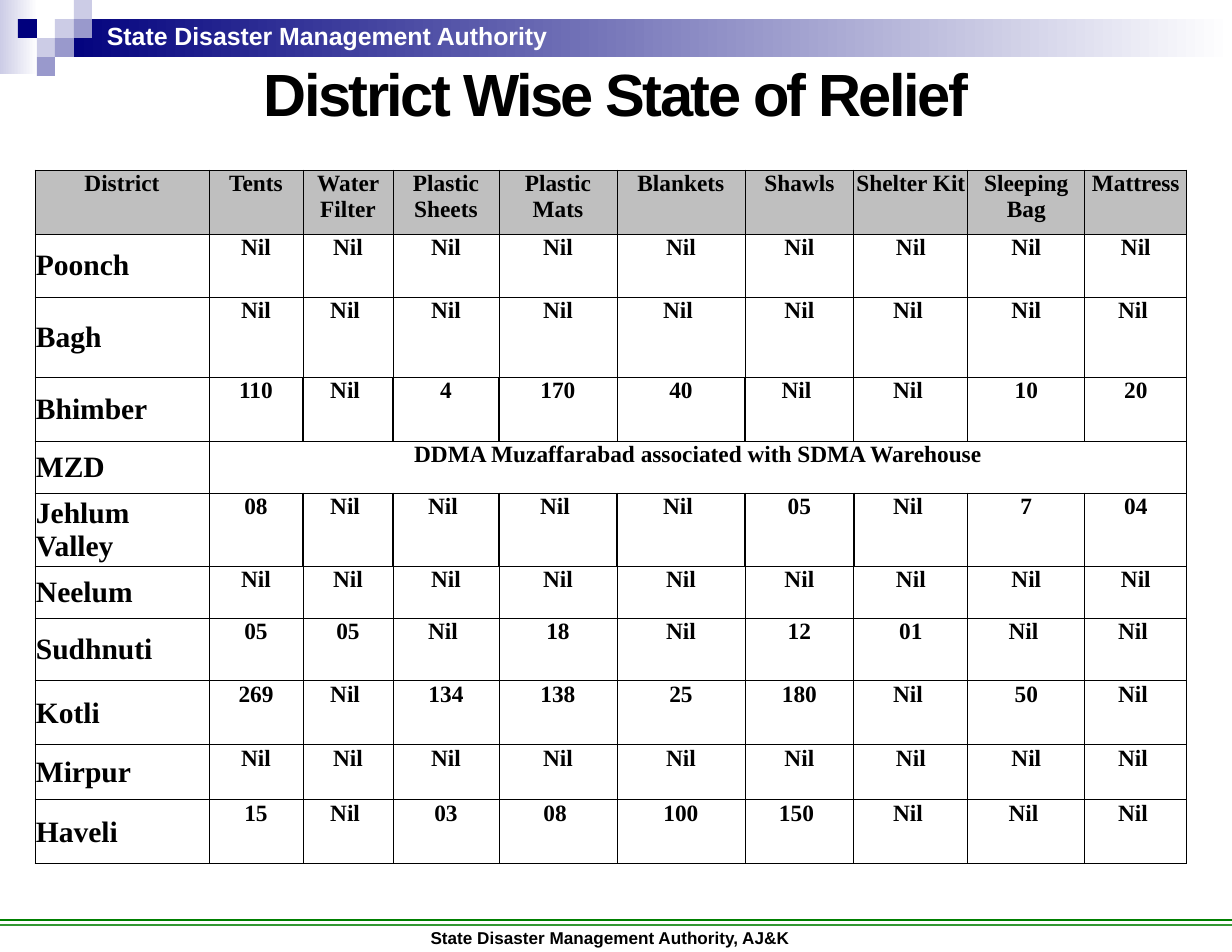
from typing import NamedTuple

from lxml.etree import SubElement
from pptx import Presentation
from pptx.dml.color import RGBColor
from pptx.enum.shapes import MSO_CONNECTOR, MSO_SHAPE
from pptx.enum.text import MSO_ANCHOR, MSO_AUTO_SIZE, PP_ALIGN
from pptx.oxml.ns import qn
from pptx.util import Emu, Pt

PX_PER_INCH = 112
BLACK, WHITE, NAVY = "000000", "FFFFFF", "00007D"
PALE, LILAC, GREY = "CCCCE6", "9999CC", "BFBFBF"


class Box(NamedTuple):
    x: int
    y: int
    w: int
    h: int


class Square(NamedTuple):
    col: int
    row: int
    color: str


class Rule(NamedTuple):
    y: int
    color: str


SQUARE_X = (18, 37, 55, 74, 92)
SQUARE_Y = (0, 19, 38, 57, 76)
SQUARES = (
    Square(2, 1, PALE), Square(3, 0, PALE), Square(3, 1, LILAC),
    Square(1, 2, PALE), Square(0, 1, NAVY), Square(2, 2, LILAC),
    Square(1, 3, LILAC),
)
FOOTER_RULES = (Rule(920, "008000"), Rule(925, "339933"))

COL_WIDTHS = (174, 94, 90, 106, 118, 128, 109, 114, 117, 102)
ROW_HEIGHTS = (64, 63, 80, 64, 52, 73, 52, 63, 64, 55, 64)
# Some values carry a trailing space, which shifts them within centred cells.
ROWS = (
    "District|Tents|Water Filter|Plastic Sheets|Plastic Mats|Blankets|Shawls|Shelter Kit|Sleeping Bag|Mattress",
    "Poonch|Nil|Nil|Nil|Nil|Nil|Nil|Nil|Nil|Nil",
    "Bagh|Nil|Nil |Nil|Nil|Nil |Nil|Nil |Nil|Nil ",
    "Bhimber|110|Nil |4|170|40|Nil |Nil |10|20",
    "MZD|DDMA Muzaffarabad associated with SDMA Warehouse",
    "Jehlum\nValley|08|Nil |Nil |Nil |Nil |05|Nil |7|04",
    "Neelum|Nil|Nil|Nil|Nil|Nil|Nil|Nil|Nil|Nil",
    "Sudhnuti|05|05|Nil |18|Nil|12|01|Nil |Nil ",
    "Kotli|269|Nil |134|138|25|180|Nil |50|Nil ",
    "Mirpur|Nil|Nil|Nil|Nil|Nil|Nil|Nil|Nil|Nil ",
    "Haveli|15|Nil |03|08 |100|150 |Nil |Nil |Nil ",
)
# Row index -> columns whose right border is heavier
HEAVY_RIGHT = {3: {1, 2, 3, 5, 7}, 4: {1, 9}, 5: set(range(1, 10))}


def px(n: int) -> Emu:
    return Emu(round(n * 914400 / PX_PER_INCH))


def rgb(color: str) -> RGBColor:
    return RGBColor.from_string(color)


def place(sp, box: Box) -> None:
    sp.left, sp.top, sp.width, sp.height = map(px, box)


def set_margins(target, left: int, top: int, right: int, bottom: int) -> None:
    target.margin_left, target.margin_right = px(left), px(right)
    target.margin_top, target.margin_bottom = px(top), px(bottom)


def style(p, name: str, size: float, color: str, align: PP_ALIGN) -> None:
    p.alignment = align
    p.font.name, p.font.size, p.font.bold = name, Pt(size), True
    p.font.color.rgb = rgb(color)


def add_rect(s, box: Box, color: str, fade_to: str = "") -> None:
    """Add a borderless rectangle, optionally fading left to right."""
    sp = s.shapes.add_shape(MSO_SHAPE.RECTANGLE, *map(px, box))
    sp.shadow.inherit = False
    sp.line.fill.background()
    if fade_to:
        sp.fill.gradient()
        sp.fill.gradient_angle = 0
        for stop, stop_color in zip(sp.fill.gradient_stops, (color, fade_to)):
            stop.color.rgb = rgb(stop_color)
    else:
        sp.fill.solid()
        sp.fill.fore_color.rgb = rgb(color)


def add_label(s, box: Box, text: str, size: float, color: str,
              align: PP_ALIGN, wrap: bool) -> None:
    tf = s.shapes.add_textbox(*map(px, box)).text_frame
    tf.word_wrap = wrap
    set_margins(tf, 12, 6, 12, 6)
    tf.text = text
    style(tf.paragraphs[0], "Arial", size, color, align)


def add_rule(s, rule: Rule, width: int) -> None:
    line = s.shapes.add_connector(MSO_CONNECTOR.STRAIGHT, 0, px(rule.y), px(width), px(rule.y))
    line.line.color.rgb = rgb(rule.color)
    line.line.width = Pt(1.25)
    SubElement(line._element.spPr, qn("a:effectLst"))


def set_borders(cell, row: int, col: int) -> None:
    heavy = HEAVY_RIGHT.get(row, set())
    widths = {"lnL": 1 if col - 1 in heavy else 0.5,
              "lnR": 1 if col in heavy else 0.5, "lnT": 0.5, "lnB": 0.5}
    tc_pr = cell._tc.get_or_add_tcPr()
    for tag, width in widths.items():
        ln = SubElement(tc_pr, qn(f"a:{tag}"), w=str(Pt(width)))
        SubElement(SubElement(ln, qn("a:solidFill")), qn("a:srgbClr"), val=BLACK)


def format_cell(cell, row: int, col: int) -> None:
    is_district = row > 0 and col == 0
    set_borders(cell, row, col)
    set_margins(cell, 1, 1, 1, 0)
    cell.vertical_anchor = MSO_ANCHOR.MIDDLE if is_district else MSO_ANCHOR.TOP
    if row == 0:
        cell.fill.solid()
        cell.fill.fore_color.rgb = rgb(GREY)
    else:
        cell.fill.background()
    for p in cell.text_frame.paragraphs:
        style(p, "Times New Roman", 19 if is_district else 15, BLACK,
              PP_ALIGN.JUSTIFY if is_district else PP_ALIGN.CENTER)


def add_relief_table(s, x: int, y: int) -> None:
    box = Box(x, y, sum(COL_WIDTHS), sum(ROW_HEIGHTS))
    table = s.shapes.add_table(len(ROWS), len(COL_WIDTHS), *map(px, box)).table
    table.first_row = table.horz_banding = False
    for column, width in zip(table.columns, COL_WIDTHS):
        column.width = px(width)
    for r, (line, height) in enumerate(zip(ROWS, ROW_HEIGHTS)):
        table.rows[r].height = px(height)
        values = line.split("|")
        for c, value in enumerate(values):
            table.cell(r, c).text = value
        for c in range(len(COL_WIDTHS)):
            format_cell(table.cell(r, c), r, c)
        if len(values) < len(COL_WIDTHS):
            table.cell(r, len(values) - 1).merge(table.cell(r, len(COL_WIDTHS) - 1))


def set_title(s, box: Box, text: str) -> None:
    title = s.shapes.title
    place(title, box)
    tf = title.text_frame
    tf.text = text
    tf.auto_size, tf.word_wrap = MSO_AUTO_SIZE.NONE, True
    tf.vertical_anchor = MSO_ANCHOR.TOP
    set_margins(tf, 0, 0, 0, 0)
    p = tf.paragraphs[0]
    p.line_spacing = 0.9
    style(p, "Arial", 38.3, BLACK, PP_ALIGN.CENTER)
    p.runs[0].font._element.set("spc", "-160")


def main() -> None:
    prs = Presentation()
    prs.slide_width, prs.slide_height = px(1232), px(952)
    s = prs.slides.add_slide(prs.slide_layouts[5])

    add_rect(s, Box(0, 0, 38, 74), PALE, WHITE)
    add_rect(s, Box(56, 19, 1176, 38), NAVY, WHITE)
    for sq in SQUARES:
        x, y = SQUARE_X[sq.col], SQUARE_Y[sq.row]
        add_rect(s, Box(x, y, SQUARE_X[sq.col + 1] - x, SQUARE_Y[sq.row + 1] - y), sq.color)
    add_label(s, Box(95, 15, 468, 43), "State Disaster Management Authority",
              16, WHITE, PP_ALIGN.LEFT, False)

    for rule in FOOTER_RULES:
        add_rule(s, rule, 1232)
    add_label(s, Box(317, 921, 591, 35), "State Disaster Management Authority, AJ&K ",
              11, BLACK, PP_ALIGN.CENTER, True)

    set_title(s, Box(0, 65, 1232, 65), "District Wise State of Relief")
    add_relief_table(s, 35, 170)
    prs.save("out.pptx")


if __name__ == "__main__":
    main()
